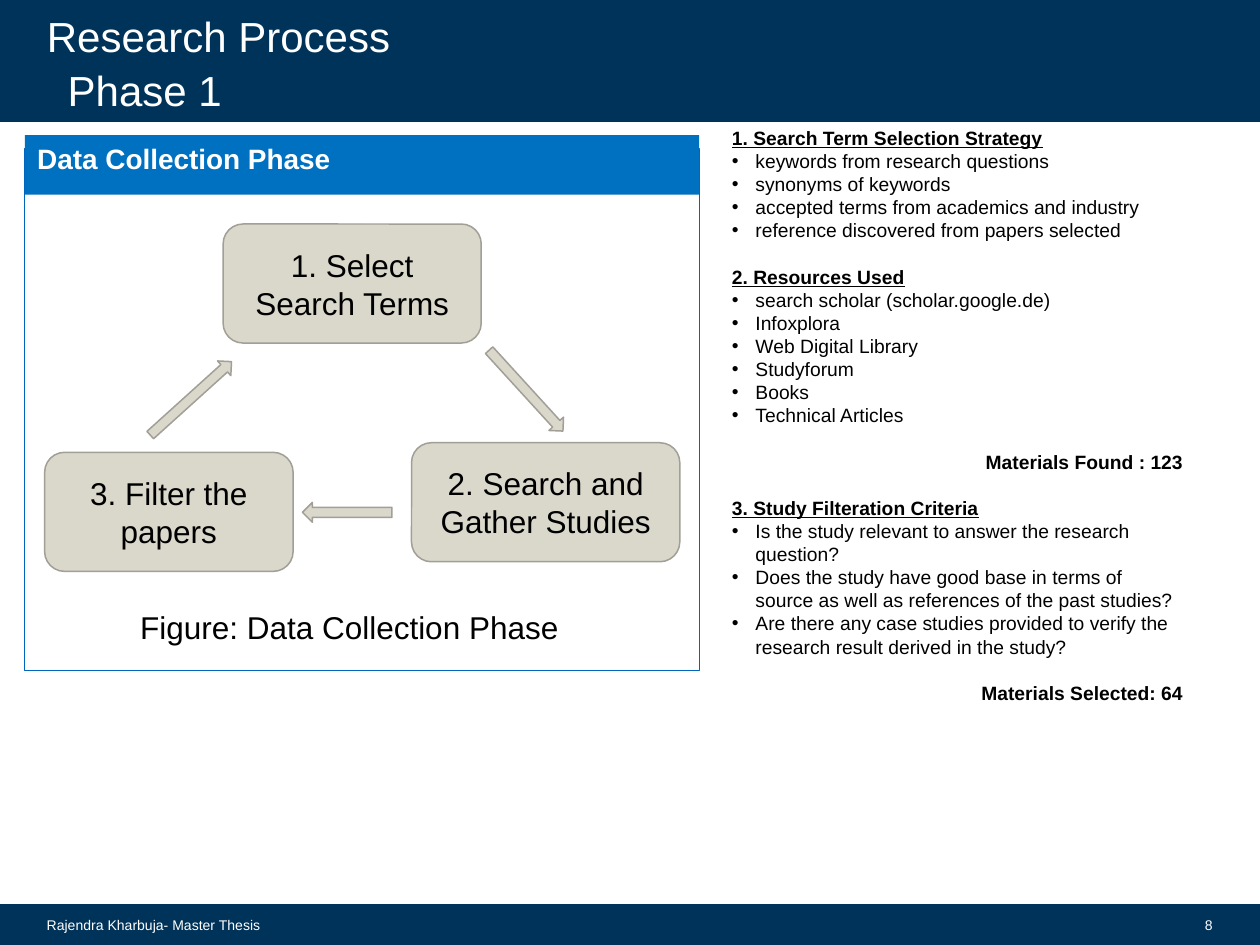
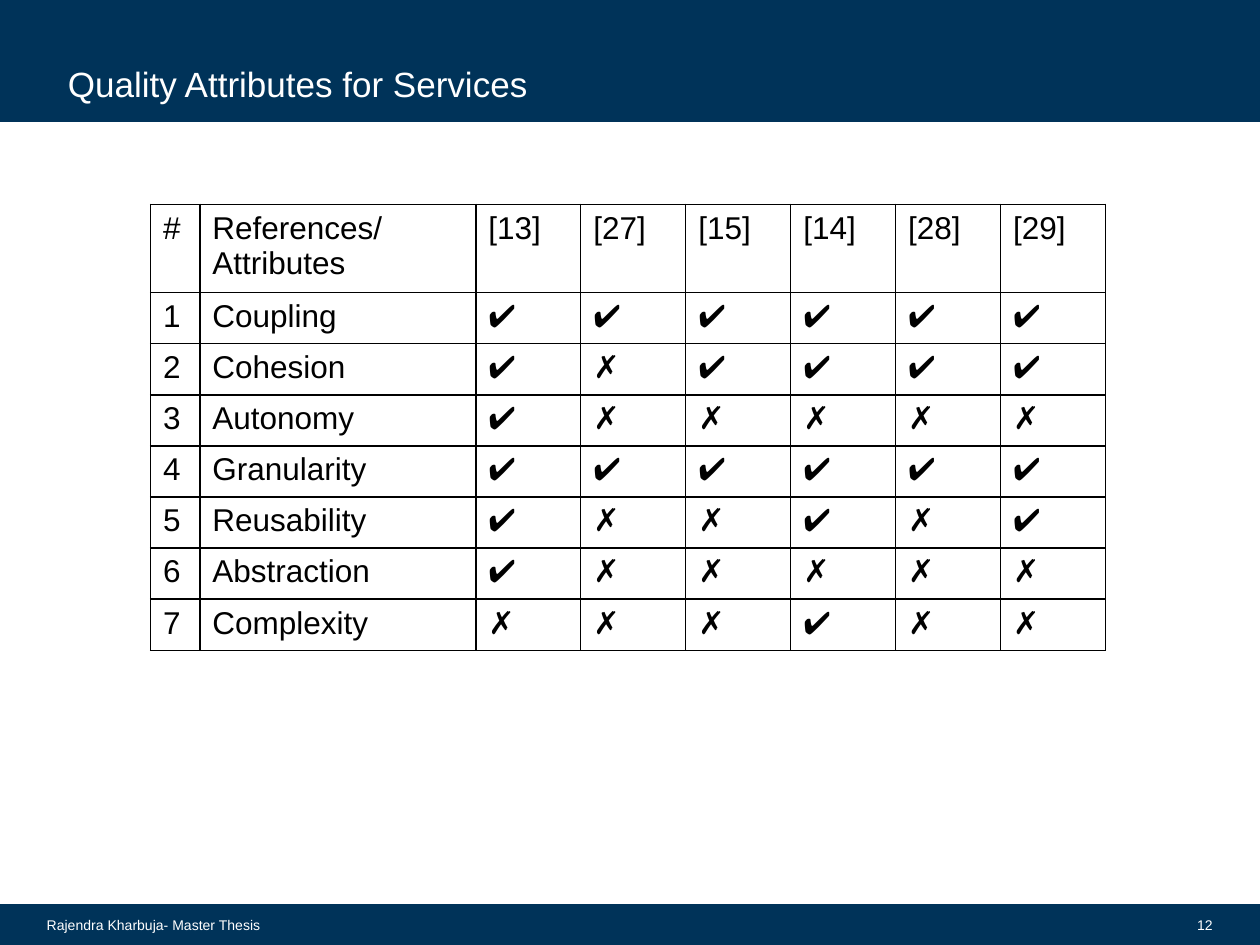
from lxml import etree
from pptx import Presentation
from pptx.dml.color import RGBColor
from pptx.enum.shapes import MSO_SHAPE
from pptx.enum.text import MSO_ANCHOR, MSO_AUTO_SIZE, PP_ALIGN
from pptx.oxml.ns import qn
from pptx.util import Pt

# Content
AUTHOR = "Rajendra Kharbuja- Master Thesis"
PHASE = "Data Collection Phase"
STEPS = [  # text, left, top, width
    ("1. Select Search Terms", 127.5, 128, 147.5),
    ("2. Search and Gather Studies", 235.2, 253, 153.3),
    ("3. Filter the papers", 25.5, 258.5, 142),
]
ARROWS = [  # left, top, width, turn
    (269.3, 217.6, 62.6, 47.6),
    (77.8, 222, 62.6, 317.9),
    (172.8, 287.1, 51.2, 180),
]
NOTES = [  # heading, bullets, result
    ("1. Search Term Selection Strategy", [
        "keywords from research questions",
        "synonyms of keywords",
        "accepted terms from academics and industry",
        "reference discovered from papers selected"], None),
    ("2. Resources Used", [
        "search scholar (scholar.google.de)",
        "Infoxplora",
        "Web Digital Library",
        "Studyforum",
        "Books",
        "Technical Articles"], "Materials Found : 123"),
    ("3. Study Filteration Criteria", [
        "Is the study relevant to answer the research question?",
        "Does the study have good base in terms of source as well as "
        "references of the past studies?",
        "Are there any case studies provided to verify the research "
        "result derived in the study?"], "Materials Selected: 64"),
]
HEAD = ["#", "References/Attributes",
        "[13]", "[27]", "[15]", "[14]", "[28]", "[29]"]
MARKS = {
    "Coupling": "✔✔✔✔✔✔",
    "Cohesion": "✔✗✔✔✔✔",
    "Autonomy": "✔✗✗✗✗✗",
    "Granularity": "✔✔✔✔✔✔",
    "Reusability": "✔✗✗✔✗✔",
    "Abstraction": "✔✗✗✗✗✗",
    "Complexity": "✗✗✗✔✗✗",
}

# Shared look
NAVY = RGBColor(0x00, 0x33, 0x59)
BLUE = RGBColor(0x00, 0x70, 0xC0)
EDGE = RGBColor(0x00, 0x65, 0xBD)
SAND = RGBColor(0xDA, 0xD7, 0xCB)
GREY = RGBColor(0xA1, 0x9F, 0x96)
BLACK = RGBColor(0, 0, 0)
WHITE = RGBColor(255, 255, 255)
FONT = "Arial"
WIDE, HIGH = 720, 540
FOOT = 517  # top of the footer band


def write(para, text, size, color=BLACK, bold=False, line=False,
          align=PP_ALIGN.LEFT, before=0):
    para.alignment = align
    para.line_spacing = 1.0
    para.space_before = Pt(before)
    run = para.add_run()
    run.text = text
    font = run.font
    font.name, font.size, font.bold, font.underline = FONT, Pt(size), bold, line
    font.color.rgb = color


def place(shape, left, top, width, height):
    shape.left, shape.top = Pt(left), Pt(top)
    shape.width, shape.height = Pt(width), Pt(height)


def draw(slide, kind, box, fill=None, edge=None, weight=0.85):
    shape = slide.shapes.add_shape(kind, *map(Pt, box))
    shape.shadow.inherit = False
    if fill is None:
        shape.fill.background()
    else:
        shape.fill.solid()
        shape.fill.fore_color.rgb = fill
    if edge is None:
        shape.line.fill.background()
    else:
        shape.line.color.rgb = edge
        shape.line.width = Pt(weight)
    return shape


def label(slide, text, box, size, color=BLACK, **look):
    frame = slide.shapes.add_textbox(*map(Pt, box)).text_frame
    frame.word_wrap = True
    frame.vertical_anchor = MSO_ANCHOR.MIDDLE
    write(frame.paragraphs[0], text, size, color, **look)
    return frame


def seat(frame):
    """Set a title line on the bottom edge of its box."""
    frame.auto_size = MSO_AUTO_SIZE.NONE
    frame.vertical_anchor = MSO_ANCHOR.BOTTOM
    frame.margin_left = frame.margin_right = Pt(7.2)
    frame.margin_top = frame.margin_bottom = 0


def start(deck, layout, title, left, top, size, page):
    """Add a slide with its bands, title and footer."""
    slide = deck.slides.add_slide(deck.slide_layouts[layout])
    tree = slide.shapes._spTree
    for y, tall in ((0, 68.8), (FOOT, HIGH - FOOT)):
        band = draw(slide, MSO_SHAPE.RECTANGLE, (0, y, WIDE, tall),
                    NAVY, NAVY, 1.35)
        tree.insert(2, band._element)
    head = slide.shapes.title
    place(head, left, top, 593, 28)
    seat(head.text_frame)
    write(head.text_frame.paragraphs[0], title, size, WHITE)
    label(slide, AUTHOR, (19.6, FOOT, 153.5, 23), 8, WHITE)
    label(slide, page, (650, FOOT, 50, 23), 8, WHITE, align=PP_ALIGN.RIGHT)
    return slide


def dot(para):
    props = para._p.get_or_add_pPr()
    props.set("marL", str(Pt(13.5)))
    props.set("indent", str(-Pt(13.5)))
    etree.SubElement(props, qn("a:buFont")).set("typeface", FONT)
    etree.SubElement(props, qn("a:buChar")).set("char", "•")


def plain(para):
    props = para._p.get_or_add_pPr()
    props.set("marL", "0")
    props.set("indent", "0")
    etree.SubElement(props, qn("a:buNone"))


def fill_notes(body):
    place(body, 411, 68.5, 272.3, 340.6)
    frame = body.text_frame
    frame.auto_size = MSO_AUTO_SIZE.NONE
    frame.vertical_anchor = MSO_ANCHOR.TOP
    gap = 13.2
    for i, (head, items, result) in enumerate(NOTES):
        para = frame.add_paragraph() if i else frame.paragraphs[0]
        plain(para)
        write(para, head, 11, bold=True, line=True, before=gap if i else 0)
        for item in items:
            para = frame.add_paragraph()
            dot(para)
            write(para, item, 11)
        if result:
            para = frame.add_paragraph()
            plain(para)
            write(para, result, 11, bold=True, align=PP_ALIGN.RIGHT, before=gap)


def add_phase(deck):
    slide = start(deck, 1, "Research Process", 19.6, 6.8, 24, "8")
    seat(label(slide, "Phase 1", (31.6, 37.6, 593, 28), 24, WHITE))
    fill_notes(slide.placeholders[1])

    # Framed panel with its heading
    draw(slide, MSO_SHAPE.RECTANGLE, (14.2, 85.2, 385.4, 298), None, EDGE, 0.75)
    bar = draw(slide, MSO_SHAPE.RECTANGLE, (14.2, 77.2, 385.4, 34), BLUE)
    bar.text_frame.vertical_anchor = MSO_ANCHOR.TOP
    write(bar.text_frame.paragraphs[0], PHASE, 16, WHITE, bold=True)

    # Cycle of steps
    for text, left, top, width in STEPS:
        step = draw(slide, MSO_SHAPE.ROUNDED_RECTANGLE,
                    (left, top, width, 68), SAND, GREY)
        frame = step.text_frame
        frame.word_wrap = True
        frame.vertical_anchor = MSO_ANCHOR.MIDDLE
        write(frame.paragraphs[0], text, 18, align=PP_ALIGN.CENTER)
    for left, top, width, turn in ARROWS:
        arrow = draw(slide, MSO_SHAPE.RIGHT_ARROW,
                     (left, top, width, 11.3), SAND, GREY)
        arrow.rotation = turn
    label(slide, "Figure: " + PHASE, (73, 343.7, 290, 29), 18)


def rule(cell):
    """Black hairlines on all four sides."""
    props = cell._tc.get_or_add_tcPr()
    for i, side in enumerate("LRTB"):
        edge = etree.Element(qn("a:ln" + side), w=str(Pt(1)))
        paint = etree.SubElement(edge, qn("a:solidFill"))
        etree.SubElement(paint, qn("a:srgbClr")).set("val", str(BLACK))
        props.insert(i, edge)


def add_marks(deck):
    slide = start(deck, 5, "Quality Attributes for Services",
                  31.6, 32, 20, "12")
    rows = [HEAD] + [[str(n), name, *marks]
                     for n, (name, marks) in enumerate(MARKS.items(), 1)]
    cols = [28.2, 157.7] + [60] * 6
    talls = [47.7] + [29.2] * len(MARKS)
    table = slide.shapes.add_table(
        len(rows), len(cols), Pt(86), Pt(116.8),
        Pt(sum(cols)), Pt(sum(talls))).table
    table.first_row = table.horz_banding = False
    for col, width in zip(table.columns, cols):
        col.width = Pt(width)
    for r, row in enumerate(rows):
        table.rows[r].height = Pt(talls[r])
        for c, text in enumerate(row):
            cell = table.cell(r, c)
            cell.fill.background()
            rule(cell)
            write(cell.text_frame.paragraphs[0], text, 18)


def main():
    deck = Presentation()
    deck.slide_width, deck.slide_height = Pt(WIDE), Pt(HIGH)
    add_phase(deck)
    add_marks(deck)
    deck.save("out.pptx")


if __name__ == "__main__":
    main()
